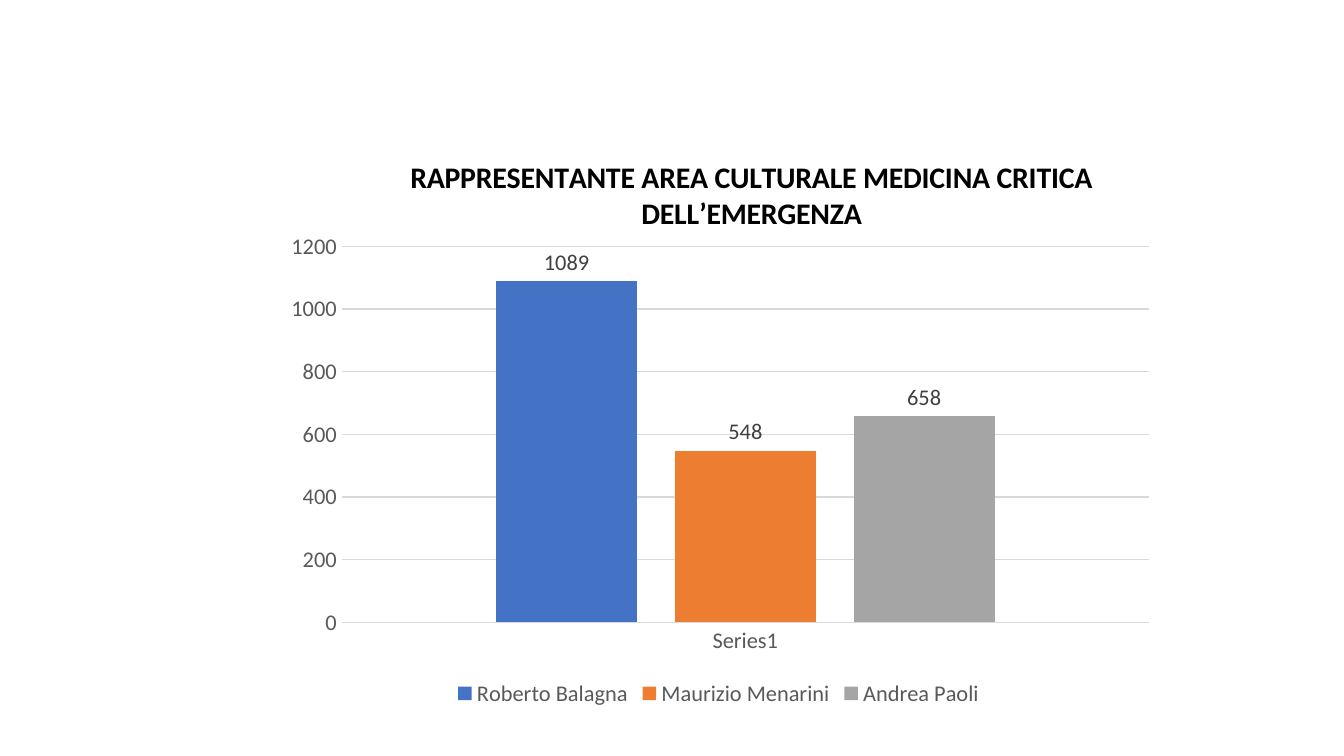
from pptx import Presentation
from pptx.chart.data import CategoryChartData
from pptx.dml.color import RGBColor
from pptx.enum.chart import (XL_CHART_TYPE, XL_LABEL_POSITION,
                             XL_LEGEND_POSITION, XL_TICK_MARK)
from pptx.oxml import parse_xml
from pptx.oxml.ns import nsdecls
from pptx.util import Cm, Pt

COLUMNS = XL_CHART_TYPE.COLUMN_CLUSTERED
BOTTOM = XL_LEGEND_POSITION.BOTTOM
OUTSIDE_END = XL_LABEL_POSITION.OUTSIDE_END
NO_TICK = XL_TICK_MARK.NONE

FONT = "Calibri"
BLACK = RGBColor(0x00, 0x00, 0x00)
LABEL = RGBColor(0x40, 0x40, 0x40)
GRAY = RGBColor(0x59, 0x59, 0x59)
GRID = RGBColor(0xD9, 0xD9, 0xD9)
BLUE = RGBColor(0x44, 0x72, 0xC4)
ORANGE = RGBColor(0xED, 0x7D, 0x31)
SILVER = RGBColor(0xA5, 0xA5, 0xA5)

CANDIDATES = [
    ("Roberto Balagna", 1089, BLUE),
    ("Maurizio Menarini", 548, ORANGE),
    ("Andrea Paoli", 658, SILVER),
]


def set_text(tf, text, size=12, color=GRAY, bold=False):
    r = tf.paragraphs[0].add_run()
    r.text = text
    r.font.name, r.font.size, r.font.bold = FONT, Pt(size), bold
    r.font.color.rgb = color


def place(element, index, inner=False, **fractions):
    """Give a chart part a manual layout, in fractions of the chart."""
    for old in element.xpath("c:layout"):
        element.remove(old)
    target = '<c:layoutTarget val="inner"/>' if inner else ""
    modes = "".join(f'<c:{k}Mode val="edge"/>' for k in "xy")
    values = "".join(f'<c:{k} val="{v}"/>' for k, v in fractions.items())
    element.insert(index, parse_xml(
        f'<c:layout {nsdecls("c")}><c:manualLayout>{target}{modes}{values}'
        '</c:manualLayout></c:layout>'))


prs = Presentation()
prs.slide_width, prs.slide_height = Cm(25.4), Cm(14.29)
s = prs.slides.add_slide(prs.slide_layouts[6])

# Chart with one series per candidate
data = CategoryChartData()
data.categories = ["Series1"]
for name, votes, _ in CANDIDATES:
    data.add_series(name, [votes])
chart = s.shapes.add_chart(COLUMNS, Cm(5.11), Cm(2.18), Cm(16.94), Cm(11.28),
                           data).chart
chart.font.name, chart.font.size = FONT, Pt(12)
chart.font.color.rgb = GRAY

# Title
set_text(chart.chart_title.text_frame,
         "RAPPRESENTANTE AREA CULTURALE MEDICINA CRITICA DELL’EMERGENZA",
         size=16, color=BLACK, bold=True)
place(chart.element.xpath(".//c:title")[0], 1, x=0.15, y=0.06)

# Columns and value labels
plot = chart.plots[0]
plot.gap_width, plot.overlap = 219, -27
plot.vary_by_categories = False
for series, (_, _, color) in zip(plot.series, CANDIDATES):
    series.format.fill.solid()
    series.format.fill.fore_color.rgb = color
    labels = series.data_labels
    labels.show_value = True
    labels.position = OUTSIDE_END
    labels.font.name, labels.font.size = FONT, Pt(12)
    labels.font.color.rgb = LABEL
place(chart.element.xpath(".//c:plotArea")[0], 0, inner=True,
      x=0.08, y=0.22, w=0.9, h=0.63)

# Axes
votes_axis, category_axis = chart.value_axis, chart.category_axis
for axis in (votes_axis, category_axis):
    axis.major_tick_mark = axis.minor_tick_mark = NO_TICK
    axis.tick_labels.font.name, axis.tick_labels.font.size = FONT, Pt(12)
    axis.tick_labels.font.color.rgb = GRAY
votes_axis.minimum_scale, votes_axis.maximum_scale = 0, 1200
votes_axis.major_unit = 200
votes_axis.format.line.fill.background()
for line in (category_axis.format.line, votes_axis.major_gridlines.format.line):
    line.color.rgb = GRID
    line.width = Pt(0.75)

# Legend
chart.has_legend = True
legend = chart.legend
legend.position = BOTTOM
legend.include_in_layout = False
legend.font.name, legend.font.size = FONT, Pt(12)
legend.font.color.rgb = GRAY

prs.save("out.pptx")
